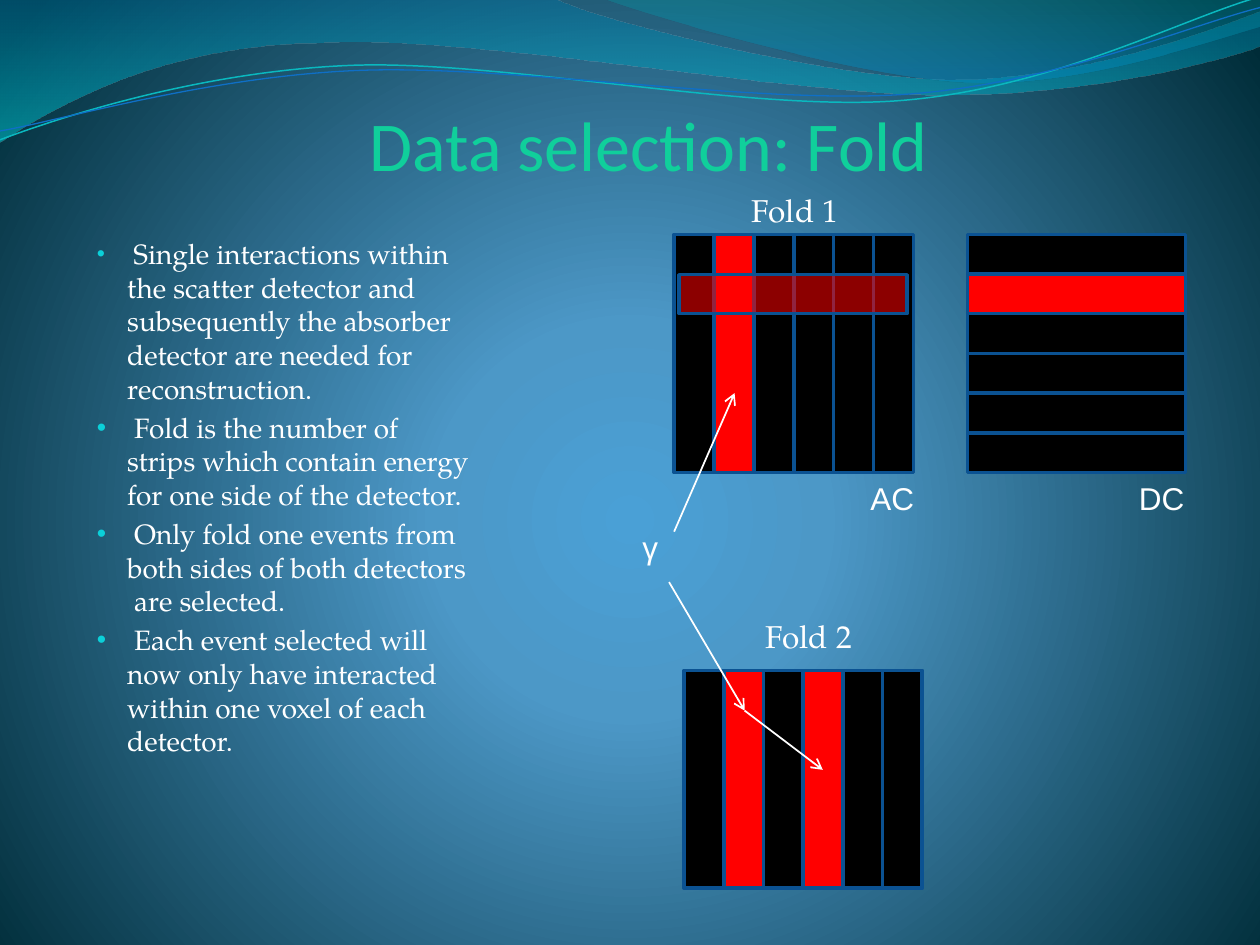
from lxml import etree
from pptx import Presentation
from pptx.dml.color import RGBColor
from pptx.enum.shapes import MSO_CONNECTOR, MSO_SHAPE
from pptx.enum.text import MSO_ANCHOR, PP_ALIGN
from pptx.oxml.ns import qn
from pptx.util import Inches, Pt

COLORS = {
    "center": "4AA0D6", "middle": "4C98C7", "edge": "002C38",
    "wave_blue": "0074A1", "wave_cyan": "00C6CF",
    "wave_teal": "00A1A9", "wave_sky": "008BBF",
    "curve_cyan": "0AB8BF", "curve_blue": "0F6FC6",
    "title": "10CF9B", "bullet": "0BD0D9", "text": "FFFFFF",
    "strip": "000000", "hit": "FF0000", "border": "0B5292",
}
SERIF = "TeX Gyre Pagella"
STRIP_COUNT = 6

# Each curve lists a start point, then Bezier segments (6 numbers) or straight ones (2)
WAVES = [
    ([(0, -0.01), (4.4, -0.01), (4.76, 0.17, 6.64, 0.63, 7.58, 0.63),
      (8.53, 0.63, 9.58, 0.26, 10, 0.09), (10.01, 0.36),
      (9.83, 0.44, 8.7, 0.76, 7.46, 0.75), (6.22, 0.75, 3.82, 0.28, 2.57, 0.34),
      (1.29, 0.35, 0.46, 0.83, -0.01, 1.13), (0, -0.01)],
     [(0, "wave_blue", 45), (100, "wave_cyan", 55)]),
    ([(4.79, -0.01), (5.09, 0.11, 6.82, 0.62, 7.69, 0.65),
      (8.56, 0.69, 9.61, 0.32, 10, 0.21), (10, 0), (4.79, -0.01)],
     [(0, "wave_teal", 30), (80, "wave_sky", 45)]),
]
CURVES = [
    ([(0, 1.11), (0.48, 0.93, 1.58, 0.57, 2.77, 0.52),
      (3.95, 0.47, 5.93, 0.89, 7.13, 0.8), (8.33, 0.71, 9.38, 0.15, 9.98, -0.02)],
     "curve_cyan", 0.85),
    ([(0, 1.04), (0.47, 0.96, 1.64, 0.61, 2.83, 0.56),
      (4.03, 0.51, 5.97, 0.83, 7.17, 0.75), (8.36, 0.67, 9.41, 0.21, 10, 0.06)],
     "curve_blue", 0.75),
]
POINTS = [
    "Single interactions within the scatter detector and subsequently "
    "the absorber detector are needed for reconstruction.",
    " Fold is the number of strips which contain energy for one side of the detector.",
    " Only fold one events from both sides of both detectors  are selected.",
    " Each event selected will now only have interacted within one voxel of each detector.",
]


def rgb(name):
    return RGBColor.from_string(COLORS[name])


def set_alpha(color_element, percent):
    if percent < 100:
        etree.SubElement(color_element, qn("a:alpha"), val=str(percent * 1000))


def set_gradient(fill, owner, stops, radial=False):
    fill.gradient()
    gradient = next(owner.iter(qn("a:gradFill")))
    for child in list(gradient):
        gradient.remove(child)
    stop_list = etree.SubElement(gradient, qn("a:gsLst"))
    for position, color, alpha in stops:
        stop = etree.SubElement(stop_list, qn("a:gs"), pos=str(position * 1000))
        set_alpha(etree.SubElement(stop, qn("a:srgbClr"), val=COLORS[color]), alpha)
    if radial:
        circle = etree.SubElement(gradient, qn("a:path"))
        circle.set("path", "circle")
        etree.SubElement(circle, qn("a:fillToRect"),
                         l="10000", t="110000", r="10000", b="100000")
    else:
        etree.SubElement(gradient, qn("a:lin"), ang="5400000", scaled="1")


def add_curve(slide, segments, close):
    points = [(Inches(segment[i]), Inches(segment[i + 1]))
              for segment in segments for i in range(0, len(segment), 2)]
    builder = slide.shapes.build_freeform(*points[0])
    builder.add_line_segments(points[1:], close=close)
    curve = builder.convert_to_shape()
    curve.shadow.inherit = False
    # Join each run of three line points into one Bezier segment
    lines = iter(list(curve.element.iter(qn("a:lnTo"))))
    for segment in segments[1:]:
        line = next(lines)
        if len(segment) == 6:
            bezier = etree.Element(qn("a:cubicBezTo"))
            line.addprevious(bezier)
            for part in (line, next(lines), next(lines)):
                bezier.append(part[0])
                part.getparent().remove(part)
    return curve


def add_run(paragraph, text, size=18, font=SERIF, color="text"):
    run = paragraph.add_run()
    run.text = text
    run.font.size, run.font.name = Pt(size), font
    run.font.color.rgb = rgb(color)


def add_text(slide, box, text="", align=PP_ALIGN.LEFT, anchor=MSO_ANCHOR.TOP,
             side_inset=0.1, bottom_inset=0.05, **style):
    frame = slide.shapes.add_textbox(*map(Inches, box)).text_frame
    frame.word_wrap, frame.vertical_anchor = True, anchor
    frame.margin_left = frame.margin_right = Inches(side_inset)
    frame.margin_top, frame.margin_bottom = Inches(0.05), Inches(bottom_inset)
    frame.paragraphs[0].alignment = align
    if text:
        add_run(frame.paragraphs[0], text, **style)
    return frame


def add_backdrop(slide):
    set_gradient(slide.background.fill, slide.element,
                 [(0, "center", 100), (25, "middle", 100), (100, "edge", 100)], radial=True)
    for segments, stops in WAVES:
        wave = add_curve(slide, segments, close=True)
        set_gradient(wave.fill, wave.element, stops)
        wave.line.fill.background()
    for segments, color, width in CURVES:
        curve = add_curve(slide, segments, close=False)
        curve.fill.background()
        curve.line.color.rgb, curve.line.width = rgb(color), Pt(width)


def add_points(slide, box):
    frame = add_text(slide, box, side_inset=0.02)
    for index, point in enumerate(POINTS):
        paragraph = frame.add_paragraph() if index else frame.paragraphs[0]
        if index:
            paragraph.space_before = Pt(3.2)
        properties = paragraph._p.get_or_add_pPr()
        properties.set("marL", str(Inches(0.24)))
        properties.set("indent", str(Inches(-0.24)))
        bullet_color = etree.SubElement(properties, qn("a:buClr"))
        etree.SubElement(bullet_color, qn("a:srgbClr"), val=COLORS["bullet"])
        etree.SubElement(properties, qn("a:buSzPct"), val="95000")
        etree.SubElement(properties, qn("a:buFont"), typeface="Arial")
        etree.SubElement(properties, qn("a:buChar"), char="•")
        if index == 0:
            add_run(paragraph, " ", size=14)
        add_run(paragraph, point, size=16)


def add_strip(slide, box, color, alpha=100):
    strip = slide.shapes.add_shape(MSO_SHAPE.RECTANGLE, *map(Inches, box))
    strip.shadow.inherit = False
    strip.fill.solid()
    strip.fill.fore_color.rgb = rgb(color)
    set_alpha(next(strip.element.spPr.iter(qn("a:srgbClr"))), alpha)
    strip.line.color.rgb, strip.line.width = rgb("border"), Pt(2)


def add_detector(slide, box, hits, vertical=True):
    left, top, width, height = box
    for index in range(STRIP_COUNT):
        if vertical:
            pitch = width / STRIP_COUNT
            strip_box = (left + index * pitch, top, pitch, height)
        else:
            pitch = height / STRIP_COUNT
            strip_box = (left, top + index * pitch, width, pitch)
        add_strip(slide, strip_box, "hit" if index in hits else "strip")


def add_arrow(slide, start, end):
    arrow = slide.shapes.add_connector(MSO_CONNECTOR.STRAIGHT, *map(Inches, start + end))
    arrow.line.color.rgb, arrow.line.width = rgb("text"), Pt(1)
    line = next(arrow.element.spPr.iter(qn("a:ln")))
    etree.SubElement(line, qn("a:tailEnd"), type="arrow")
    etree.SubElement(arrow.element.spPr, qn("a:effectLst"))


def main():
    deck = Presentation()
    deck.slide_width, deck.slide_height = Inches(10), Inches(7.5)
    slide = deck.slides.add_slide(deck.slide_layouts[6])
    add_backdrop(slide)

    # Title and bullet points
    add_text(slide, (0.74, 0, 8.82, 1.47), "Data selection: Fold", align=PP_ALIGN.CENTER,
             anchor=MSO_ANCHOR.BOTTOM, side_inset=0, bottom_inset=0,
             size=40, font="Calibri", color="title")
    add_points(slide, (0.75, 1.83, 3, 5))

    # Detector sides, gamma ray tracks and the crossing strip
    add_detector(slide, (5.35, 1.86, 1.9, 1.89), hits={1})
    add_detector(slide, (5.43, 5.32, 1.89, 1.73), hits={1, 3})
    scatter = (5.91, 5.64)
    add_arrow(slide, (5.35, 4.22), (5.83, 3.12))
    add_arrow(slide, (5.31, 4.62), scatter)
    add_arrow(slide, scatter, (6.53, 6.11))
    add_detector(slide, (7.68, 1.86, 1.73, 1.89), hits={1}, vertical=False)
    add_strip(slide, (5.39, 2.18, 1.81, 0.31), "hit", alpha=55)

    # Labels
    for text, left, top, width, font in [
        ("γ", 5, 4.14, 0.39, "Arial"),
        ("Fold 1", 5.87, 1.47, 1.34, SERIF),
        ("Fold 2", 5.98, 4.85, 1.34, SERIF),
        ("AC", 6.81, 3.75, 0.71, "Arial"),
        ("DC", 8.94, 3.75, 0.71, "Arial"),
    ]:
        add_text(slide, (left, top, width, 0.4), text, font=font)
    deck.save("out.pptx")


if __name__ == "__main__":
    main()
